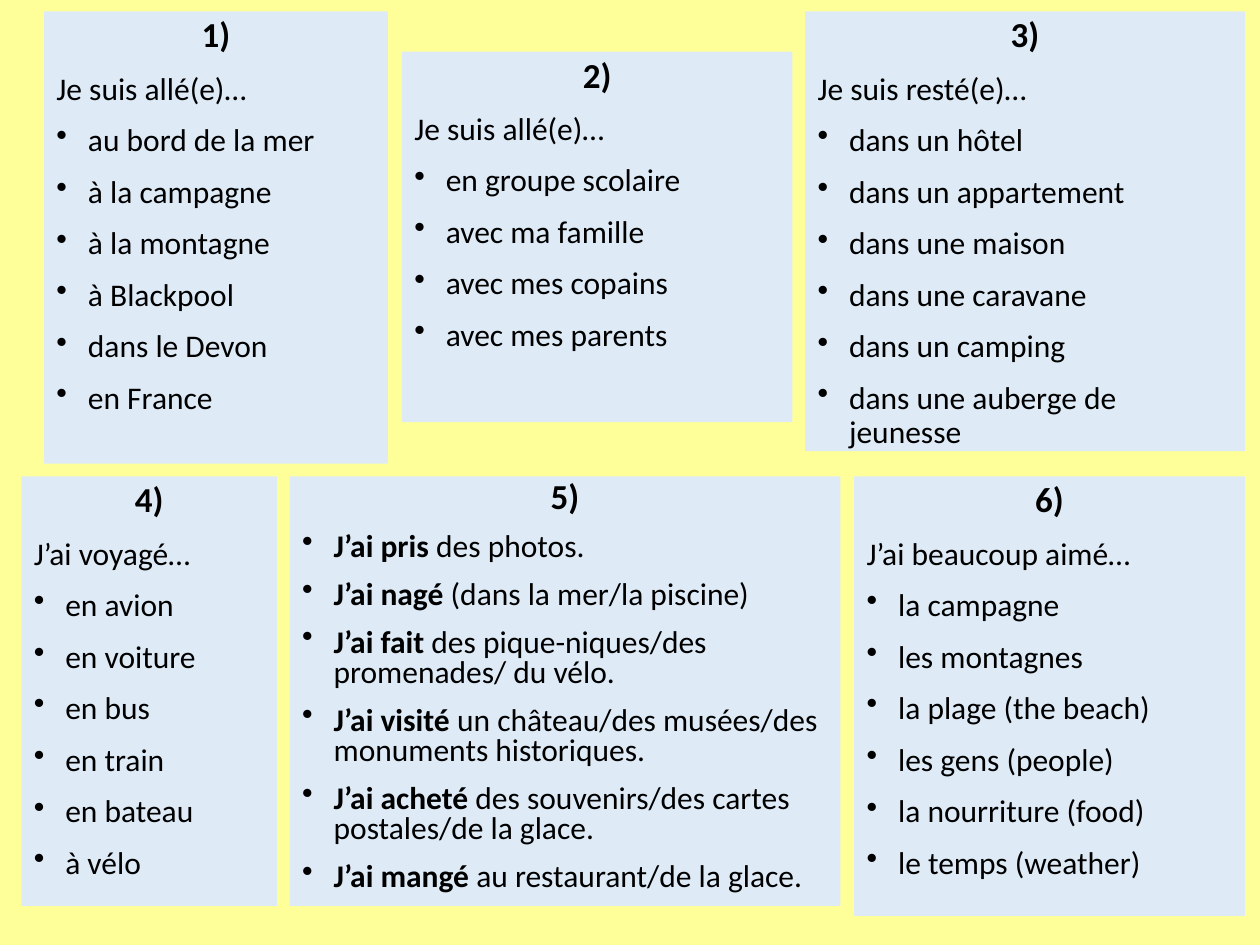
from lxml.etree import SubElement
from pptx import Presentation
from pptx.dml.color import RGBColor
from pptx.enum.text import PP_ALIGN
from pptx.oxml.ns import qn
from pptx.util import Inches, Pt

COLORS = {"page": "FFFF99", "card": "DEEBF7", "text": "000000"}

CARDS = [
    ((0.35, 0.09, 2.73, 3.59), "Je suis allé(e)…",
     ["au bord de la mer", "à la campagne", "à la montagne",
      "à Blackpool", "dans le Devon", "en France"]),
    ((3.19, 0.41, 3.1, 2.94), "Je suis allé(e)…",
     ["en groupe scolaire", "avec ma famille", "avec mes copains",
      "avec mes parents"]),
    ((6.39, 0.09, 3.49, 3.49), "Je suis resté(e)…",
     ["dans un hôtel", "dans un appartement", "dans une maison",
      "dans une caravane", "dans un camping",
      "dans une auberge de jeunesse"]),
    ((0.17, 3.78, 2.03, 3.41), "J’ai voyagé…",
     ["en avion", "en voiture", "en bus", "en train", "en bateau",
      "à vélo"]),
    ((2.3, 3.78, 4.37, 3.41), None,
     [("J’ai pris ", "des photos."),
      ("J’ai nagé ", "(dans la mer/la piscine)"),
      ("J’ai fait ", "des pique-niques/des promenades/ du vélo."),
      ("J’ai visité ", "un château/des musées/des monuments historiques."),
      ("J’ai acheté ", "des souvenirs/des cartes postales/de la glace."),
      ("J’ai mangé ", "au restaurant/de la glace.")]),
    ((6.78, 3.78, 3.1, 3.49), "J’ai beaucoup aimé…",
     ["la campagne", "les montagnes", "la plage (the beach)",
      "les gens (people)", "la nourriture (food)", "le temps (weather)"]),
]


def paint(fill, name):
    """Give a fill one solid colour."""
    fill.solid()
    fill.fore_color.rgb = RGBColor.from_string(COLORS[name])


def style(para, size, lead, bold=None):
    """Set the font and line spacing of a paragraph."""
    para.line_spacing = lead
    font = para.font
    font.name, font.size, font.bold = "Calibri", Pt(size), bold
    font.color.rgb = RGBColor.from_string(COLORS["text"])


def add_line(frame, text, lead):
    """Add a paragraph; a pair of texts has its first part in bold."""
    para = frame.add_paragraph()
    para.space_before = Pt(10)
    parts = (text,) if isinstance(text, str) else text
    for part in parts:
        para.add_run().text = part
    if len(parts) > 1:
        para.runs[0].font.bold = True
    style(para, 18, lead)
    return para


def add_bullet(para):
    """Give a paragraph a hanging round bullet."""
    props = para._p.get_or_add_pPr()
    props.set("marL", str(Inches(0.25)))
    props.set("indent", str(Inches(-0.25)))
    mark = SubElement(props, qn("a:buChar"))
    mark.set("char", "•")
    props.remove(mark)
    props.insert_element_before(mark, "a:tabLst", "a:defRPr", "a:extLst")


def add_card(slide, num, place, intro, items):
    """Add a numbered card with an optional intro and a bullet list."""
    box = slide.shapes.add_textbox(*map(Inches, place))
    paint(box.fill, "card")
    frame = box.text_frame
    frame.word_wrap = True
    lead = 0.9 if intro else 0.8
    head = frame.paragraphs[0]
    head.text = f"{num})"
    head.alignment = PP_ALIGN.CENTER
    style(head, 20, lead, True)
    if intro:
        add_line(frame, intro, lead)
    for item in items:
        add_bullet(add_line(frame, item, lead))


def main():
    """Build the slide of six phrase cards."""
    deck = Presentation()
    deck.slide_width, deck.slide_height = Inches(10), Inches(7.5)
    slide = deck.slides.add_slide(deck.slide_layouts[6])
    paint(slide.background.fill, "page")
    for num, card in enumerate(CARDS, 1):
        add_card(slide, num, *card)
    deck.save("out.pptx")


if __name__ == "__main__":
    main()
